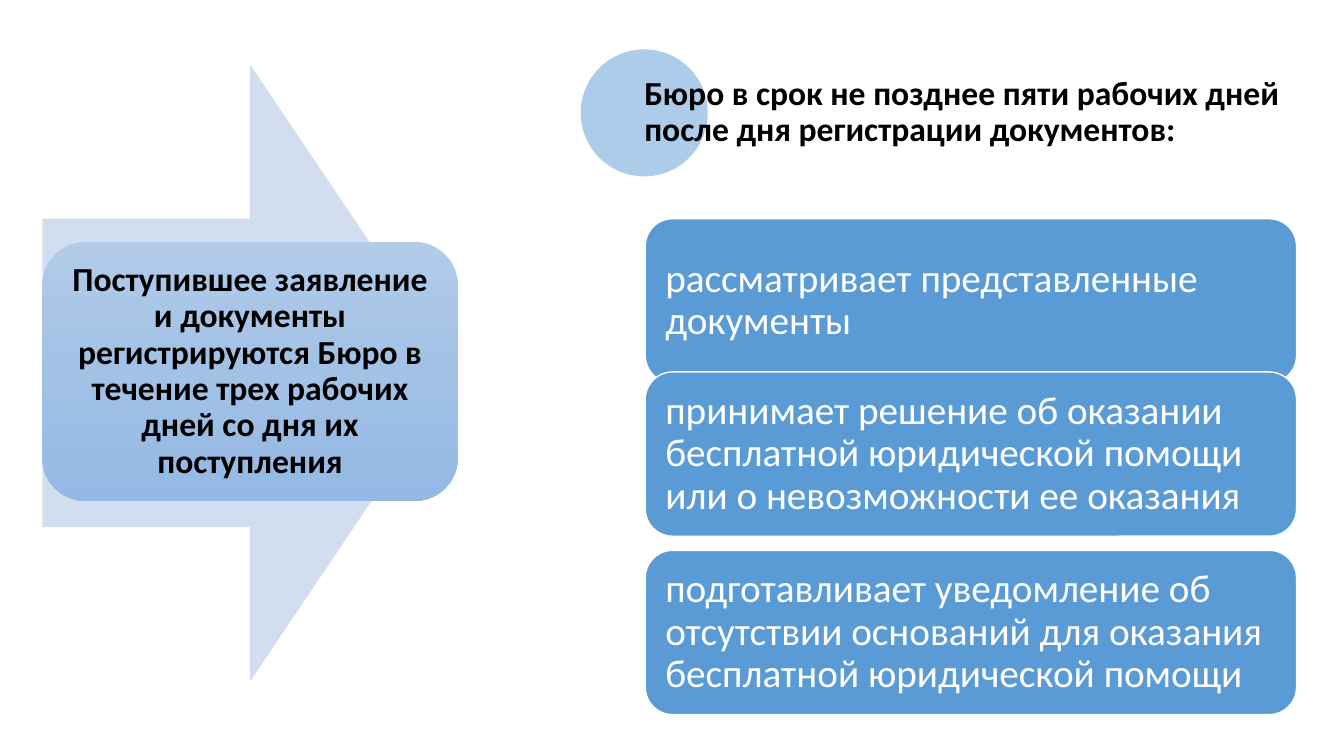
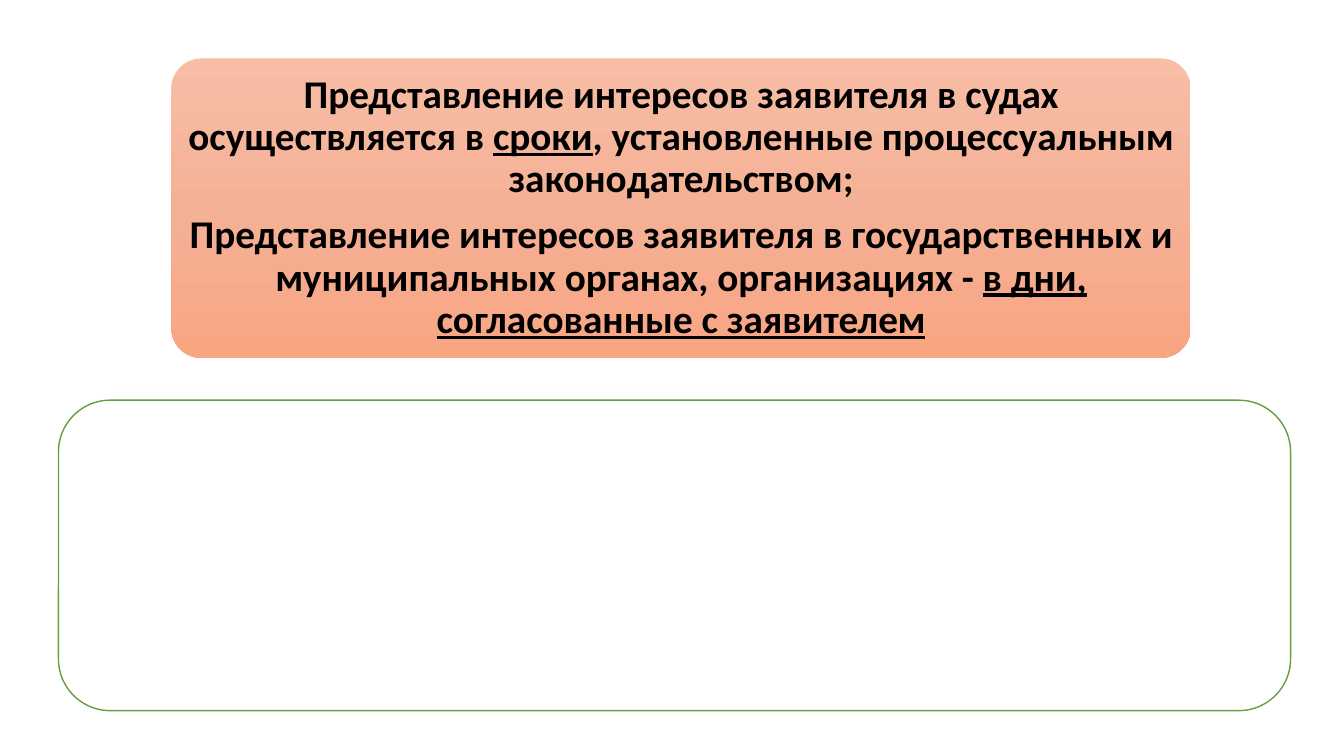
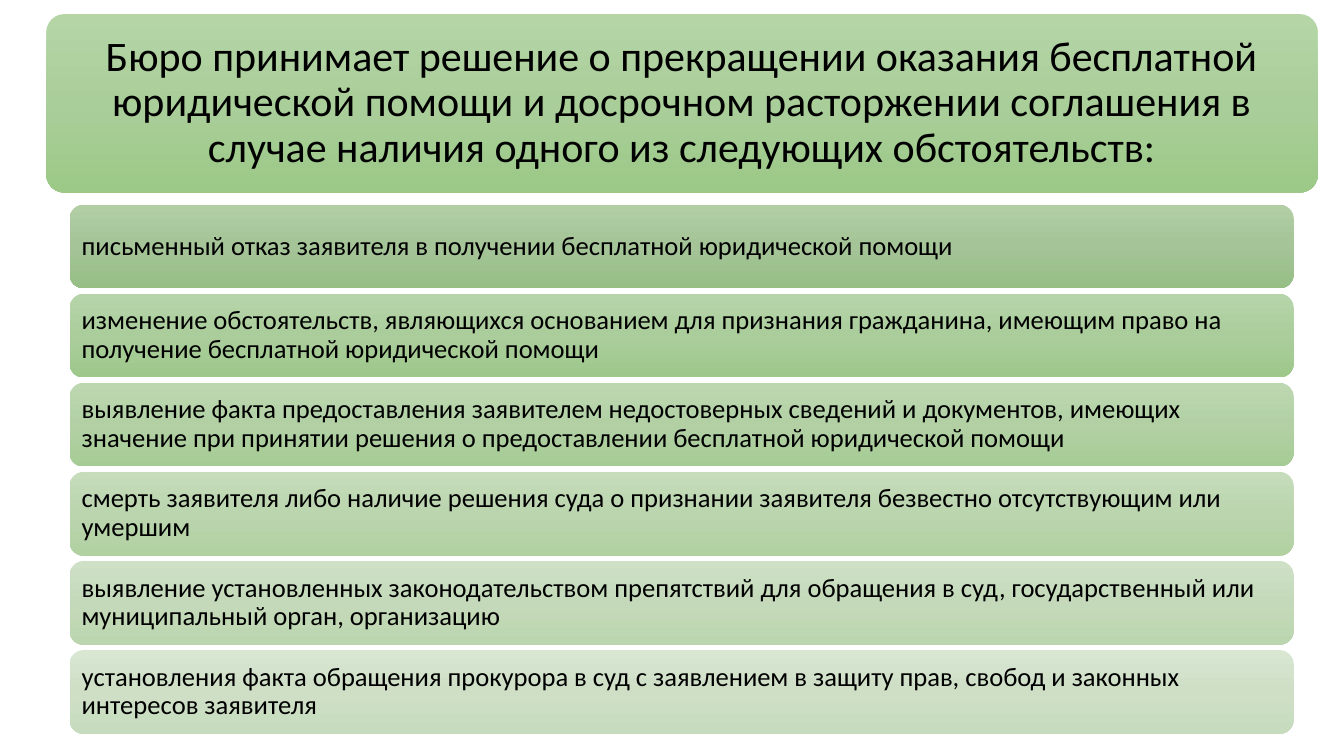
import copy
from dataclasses import dataclass
from typing import NamedTuple, Optional

import pptx
import pptx.dml.color
import pptx.enum.shapes
import pptx.enum.text
import pptx.oxml
import pptx.oxml.ns
import pptx.util
from pptx.util import Inches

SHAPE = pptx.enum.shapes.MSO_SHAPE
ALIGN = pptx.enum.text.PP_ALIGN
qn = pptx.oxml.ns.qn


@dataclass(frozen=True)
class Theme:
    font: str = "Calibri"
    black: str = "000000"
    white: str = "FFFFFF"
    blue: str = "5B9BD5"
    pale_blue: str = "D2DEEF"
    green_line: str = "669D40"
    blue_fade: tuple = ("B1CBE9", "A3C1E5", "93B9E4")
    orange_fade: tuple = ("F7BDA5", "F5B196", "F8A582")
    green_fade: tuple = ("B5D5A7", "AACE9A", "9CC987")
    heading: int = 30
    large: int = 28
    medium: int = 24
    small: int = 19
    line_spacing: float = 0.9
    space_after: float = 0.35


THEME = Theme()


class Box(NamedTuple):
    left: float
    top: float
    width: float
    height: float


class TextStyle(NamedTuple):
    size: int
    margin_x: float
    margin_y: float
    color: str = THEME.black
    bold: bool = False
    align: ALIGN = ALIGN.LEFT


class Span(NamedTuple):
    text: str
    underline: bool = False


class Reason(NamedTuple):
    text: str
    fade: tuple


STEP_STYLE = TextStyle(THEME.large, 0.12, 0.12, THEME.white)
REGISTER_STYLE = TextStyle(THEME.medium, 0.1, 0.1, bold=True, align=ALIGN.CENTER)
DEADLINE_STYLE = TextStyle(THEME.medium, 0, 0.03, bold=True)
COURT_STYLE = TextStyle(THEME.large, 0.15, 0.13, bold=True, align=ALIGN.CENTER)
REASON_STYLE = TextStyle(THEME.small, 0.08, 0.08)
HEADING_STYLE = TextStyle(THEME.heading, 0.17, 0.17, align=ALIGN.CENTER)

STEPS = [
    (2.17, "рассматривает представленные документы"),
    (3.69, "принимает решение об оказании бесплатной юридической помощи или о невозможности ее оказания"),
    (5.46, "подготавливает уведомление об отсутствии оснований для оказания бесплатной юридической помощи"),
]

COURT_TEXT = [
    [
        Span("Представление интересов заявителя в судах осуществляется в "),
        Span("сроки", True),
        Span(", установленные процессуальным законодательством;"),
    ],
    [
        Span("Представление интересов заявителя в государственных и муниципальных органах, организациях - "),
        Span("в дни, согласованные с заявителем", True),
    ],
]

REASONS = [
    Reason("письменный отказ заявителя в получении бесплатной юридической помощи",
           ("B1CEA4", "A5C498", "96BE85")),
    Reason("изменение обстоятельств, являющихся основанием для признания гражданина, "
           "имеющим право на получение бесплатной юридической помощи",
           ("B6D4A9", "ABCD9C", "9DC88A")),
    Reason("выявление факта предоставления заявителем недостоверных сведений и документов, "
           "имеющих значение при принятии решения о предоставлении бесплатной юридической помощи",
           ("BDD8B1", "B2D0A4", "A6CC95")),
    Reason("смерть заявителя либо наличие решения суда о признании заявителя "
           "безвестно отсутствующим или умершим",
           ("C6DCBB", "BBD5AF", "B1D1A1")),
    Reason("выявление установленных законодательством препятствий для обращения в суд, "
           "государственный или муниципальный орган, организацию",
           ("CEE1C6", "C4D9BA", "BBD6AF")),
    Reason("установления факта обращения прокурора в суд с заявлением в защиту прав, "
           "свобод и законных интересов заявителя",
           ("D8E6D2", "CEDFC6", "C7DCBE")),
]


def rgb(color: str) -> pptx.dml.color.RGBColor:
    return pptx.dml.color.RGBColor.from_string(color)


def fill_fade(sp, colors: tuple) -> None:
    sp.fill.gradient()
    sp.fill.gradient_angle = 270
    stop_list = sp.element.spPr.find(".//" + qn("a:gsLst"))
    stop_list.insert(1, copy.deepcopy(stop_list[0]))
    for i, (stop, color) in enumerate(zip(sp.fill.gradient_stops, colors)):
        stop.color.rgb = rgb(color)
        stop.position = i / 2


def add_shape(slide, kind: SHAPE, box: Box, fill, line: Optional[str] = None,
              adjust: Optional[float] = None):
    sp = slide.shapes.add_shape(kind, *map(Inches, box))
    sp.shadow.inherit = False
    if adjust is not None:
        sp.adjustments[0] = adjust
    if isinstance(fill, tuple):
        fill_fade(sp, fill)
    else:
        sp.fill.solid()
        sp.fill.fore_color.rgb = rgb(fill)
    if line:
        sp.line.color.rgb = rgb(line)
        sp.line.width = pptx.util.Pt(1)
    else:
        sp.line.fill.background()
    return sp


def set_alpha(sp, percent: int) -> None:
    color = sp.element.spPr.find(qn("a:solidFill")).find(qn("a:srgbClr"))
    alpha = pptx.oxml.parse_xml(
        '<a:alpha xmlns:a="http://schemas.openxmlformats.org/drawingml/2006/main" '
        f'val="{percent * 1000}"/>')
    color.append(alpha)


def write(sp, paragraphs: list, style: TextStyle) -> None:
    tf = sp.text_frame
    tf.word_wrap = True
    tf.auto_size = pptx.enum.text.MSO_AUTO_SIZE.NONE
    tf.vertical_anchor = pptx.enum.text.MSO_ANCHOR.MIDDLE
    tf.margin_left = tf.margin_right = Inches(style.margin_x)
    tf.margin_top = tf.margin_bottom = Inches(style.margin_y)
    for i, spans in enumerate(paragraphs):
        p = tf.add_paragraph() if i else tf.paragraphs[0]
        p.alignment = style.align
        p.line_spacing = THEME.line_spacing
        p.space_after = pptx.util.Pt(style.size * THEME.space_after)
        p.font.name = THEME.font
        p.font.size = pptx.util.Pt(style.size)
        p.font.bold = style.bold
        p.font.color.rgb = rgb(style.color)
        for span in spans:
            r = p.add_run()
            r.text = span.text
            if span.underline:
                r.font.underline = True


def place_title(slide, box: Box, paragraphs: list, style: TextStyle) -> None:
    title = slide.shapes.title
    title.left, title.top, title.width, title.height = map(Inches, box)
    write(title, paragraphs, style)
    slide.shapes.element.append(title.element)


def build_deadlines(slide) -> None:
    for top, text in STEPS:
        sp = add_shape(slide, SHAPE.ROUNDED_RECTANGLE, Box(6.4, top, 6.46, 1.63),
                       THEME.blue, THEME.white)
        write(sp, [[Span(text)]], STEP_STYLE)
    add_shape(slide, SHAPE.RIGHT_ARROW, Box(0.42, 0.64, 4.12, 6.12), THEME.pale_blue)
    register = add_shape(slide, SHAPE.ROUNDED_RECTANGLE, Box(0.42, 2.4, 4.12, 2.57),
                         THEME.blue_fade)
    write(register, [[Span("Поступившее заявление и документы регистрируются Бюро "
                           "в течение трех рабочих дней со дня их поступления")]],
          REGISTER_STYLE)
    circle = add_shape(slide, SHAPE.OVAL, Box(5.76, 0.49, 1.26, 1.26), THEME.blue)
    set_alpha(circle, 50)
    place_title(slide, Box(6.39, 0.49, 6.74, 1.26),
                [[Span("Бюро в срок не позднее пяти рабочих дней после дня "
                       "регистрации документов:")]], DEADLINE_STYLE)


def build_court(slide) -> None:
    box = Box(1.7, 0.58, 10.11, 2.97)
    add_shape(slide, SHAPE.ROUNDED_RECTANGLE, box, THEME.orange_fade, adjust=0.1)
    place_title(slide, box, COURT_TEXT, COURT_STYLE)
    add_shape(slide, SHAPE.ROUNDED_RECTANGLE, Box(0.58, 3.97, 12.22, 3.08),
              THEME.white, THEME.green_line)


def build_termination(slide) -> None:
    first_top, last_top = 2.03, 6.45
    pitch = (last_top - first_top) / (len(REASONS) - 1)
    for i, reason in enumerate(REASONS):
        sp = add_shape(slide, SHAPE.ROUNDED_RECTANGLE,
                       Box(0.69, first_top + i * pitch, 12.14, 0.83), reason.fade)
        write(sp, [[Span(reason.text)]], REASON_STYLE)
    box = Box(0.46, 0.14, 12.61, 1.77)
    add_shape(slide, SHAPE.ROUNDED_RECTANGLE, box, THEME.green_fade, adjust=0.1)
    place_title(slide, box,
                [[Span("Бюро принимает решение о прекращении оказания бесплатной "
                       "юридической помощи и досрочном расторжении соглашения в случае "
                       "наличия одного из следующих обстоятельств:")]], HEADING_STYLE)


def main() -> None:
    prs = pptx.Presentation()
    prs.slide_width, prs.slide_height = Inches(13.33), Inches(7.5)
    title_only = prs.slide_layouts[5]
    for build in (build_deadlines, build_court, build_termination):
        build(prs.slides.add_slide(title_only))
    prs.save("out.pptx")


if __name__ == "__main__":
    main()
